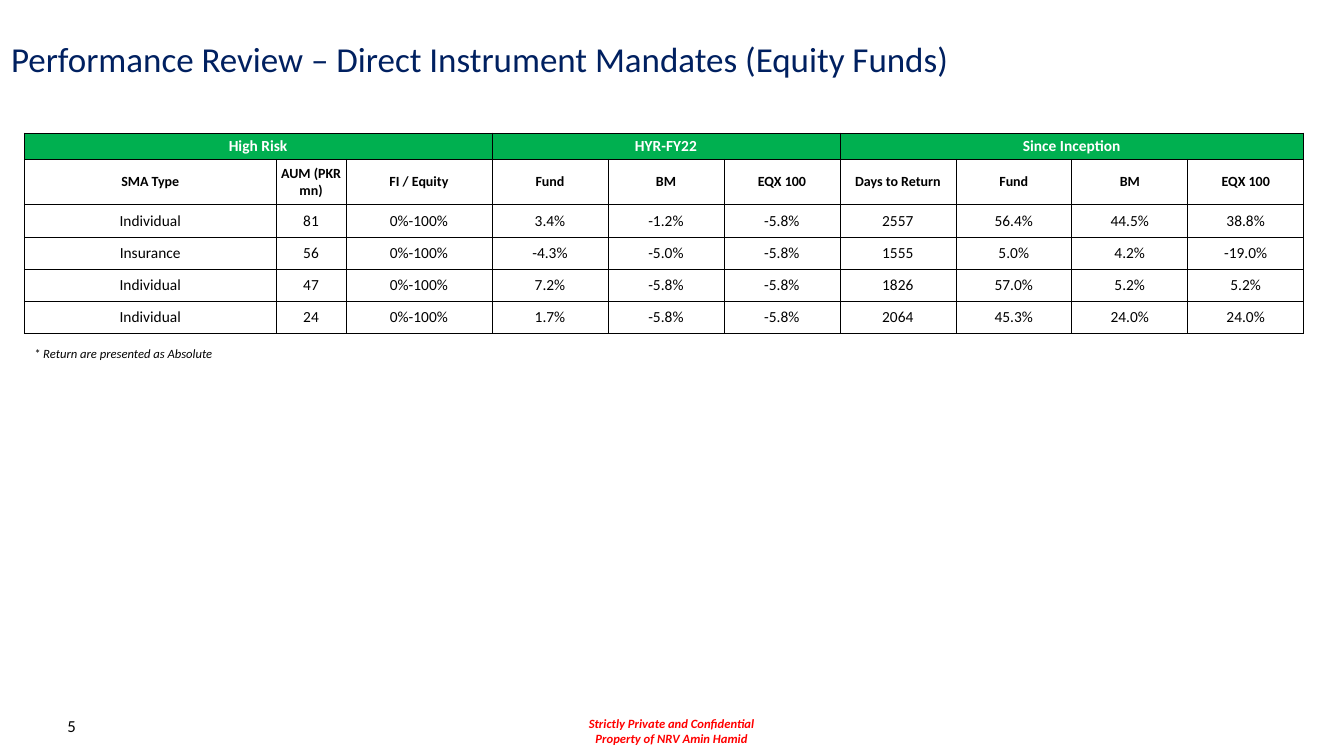
from lxml import etree
from pptx import Presentation
from pptx.dml.color import RGBColor
from pptx.enum.text import MSO_ANCHOR, MSO_AUTO_SIZE, PP_ALIGN
from pptx.oxml.ns import qn
from pptx.util import Inches, Pt

LEFT, CENTER, RIGHT = PP_ALIGN.LEFT, PP_ALIGN.CENTER, PP_ALIGN.RIGHT
TOP, MIDDLE = MSO_ANCHOR.TOP, MSO_ANCHOR.MIDDLE
NO_AUTOSIZE = MSO_AUTO_SIZE.NONE
TITLE_ONLY_LAYOUT = 5
FONT = "Calibri"
COLORS = {
    "title": "002060",
    "header": "00B050",
    "white": "FFFFFF",
    "text": "000000",
    "notice": "FF0000",
}

COLUMN_WIDTHS = [2.5, 0.69, 1.45] + [1.15] * 7
ROW_HEIGHTS = [0.26, 0.45] + [0.32] * 4
GROUPS = [("High Risk", 3), ("HYR-FY22", 3), ("Since Inception", 4)]
RETURNS = ["Fund", "BM", "EQX 100"]
COLUMN_NAMES = ["SMA Type", "AUM (PKR mn)", "FI / Equity", *RETURNS, "Days to Return", *RETURNS]
MANDATES = [
    ["Individual", "81", "0%-100%", "3.4%", "-1.2%", "-5.8%", "2557", "56.4%", "44.5%", "38.8%"],
    ["Insurance", "56", "0%-100%", "-4.3%", "-5.0%", "-5.8%", "1555", "5.0%", "4.2%", "-19.0%"],
    ["Individual", "47", "0%-100%", "7.2%", "-5.8%", "-5.8%", "1826", "57.0%", "5.2%", "5.2%"],
    ["Individual", "24", "0%-100%", "1.7%", "-5.8%", "-5.8%", "2064", "45.3%", "24.0%", "24.0%"],
]


def write_text(text_frame, text, color, size, align=LEFT, **font_format):
    text_frame.text = text
    font_values = {"name": FONT, "size": Pt(size), "bold": False, "italic": False, **font_format}
    for paragraph in text_frame.paragraphs:
        paragraph.alignment = align
        for name, value in font_values.items():
            setattr(paragraph.font, name, value)
        paragraph.font.color.rgb = RGBColor.from_string(COLORS[color])


def add_title(slide, text):
    title = slide.shapes.title
    place = {"left": 0.01, "top": 0.28, "width": 10, "height": 0.6}
    for name, value in place.items():
        setattr(title, name, Inches(value))
    frame = title.text_frame
    frame.word_wrap, frame.auto_size, frame.vertical_anchor = True, NO_AUTOSIZE, MIDDLE
    write_text(frame, text, "title", 25)


def add_label(slide, place, text, color, size, align=LEFT, anchor=TOP, wrap=True, **font_format):
    box = slide.shapes.add_textbox(*map(Inches, place))
    box.text_frame.word_wrap = wrap
    box.text_frame.vertical_anchor = anchor
    write_text(box.text_frame, text, color, size, align, **font_format)


def add_borders(cell):
    properties = cell._tc.get_or_add_tcPr()
    for side in ("a:lnL", "a:lnR", "a:lnT", "a:lnB"):
        line = etree.SubElement(properties, qn(side), w=str(Pt(0.5)))
        fill = etree.SubElement(line, qn("a:solidFill"))
        etree.SubElement(fill, qn("a:srgbClr"), val=COLORS["text"])


def format_cell(cell, fill=None):
    for side in ("left", "right", "top", "bottom"):
        setattr(cell, f"margin_{side}", 0)
    cell.vertical_anchor = MIDDLE
    add_borders(cell)
    if fill:
        cell.fill.solid()
        cell.fill.fore_color.rgb = RGBColor.from_string(COLORS[fill])
    else:
        cell.fill.background()


def add_performance_table(slide):
    frame = slide.shapes.add_table(
        len(ROW_HEIGHTS), len(COLUMN_WIDTHS), Inches(0.24), Inches(1.32),
        Inches(sum(COLUMN_WIDTHS)), Inches(sum(ROW_HEIGHTS)))
    table = frame.table
    table.first_row = table.horz_banding = False
    for column, width in zip(table.columns, COLUMN_WIDTHS):
        column.width = Inches(width)
    for row, height in zip(table.rows, ROW_HEIGHTS):
        row.height = Inches(height)

    for column_index in range(len(COLUMN_WIDTHS)):
        format_cell(table.cell(0, column_index), "header")
    start = 0
    for name, span in GROUPS:
        cell = table.cell(0, start)
        cell.merge(table.cell(0, start + span - 1))
        write_text(cell.text_frame, name, "white", 11, CENTER, bold=True)
        start += span

    for row_index, values in enumerate([COLUMN_NAMES, *MANDATES], start=1):
        is_heading = row_index == 1
        for column_index, value in enumerate(values):
            cell = table.cell(row_index, column_index)
            format_cell(cell)
            write_text(cell.text_frame, value, "text", 10 if is_heading else 11, CENTER,
                       bold=is_heading)


def main():
    presentation = Presentation()
    presentation.slide_width = Inches(13.33)
    presentation.slide_height = Inches(7.5)
    slide = presentation.slides.add_slide(presentation.slide_layouts[TITLE_ONLY_LAYOUT])

    add_label(slide, (5.73, 7.05, 1.86, 0.4),
              "Strictly Private and Confidential\nProperty of NRV Amin Hamid",
              "notice", 9, CENTER, wrap=False, bold=True, italic=True)
    add_label(slide, (0.24, 3.38, 2.2, 0.25), "* Return are presented as Absolute",
              "text", 9, italic=True)
    add_title(slide, "Performance Review – Direct Instrument Mandates (Equity Funds)")
    add_label(slide, (0.24, 7, 0.61, 0.4), "5", "text", 12, RIGHT, MIDDLE)
    add_performance_table(slide)
    presentation.save("out.pptx")


if __name__ == "__main__":
    main()
